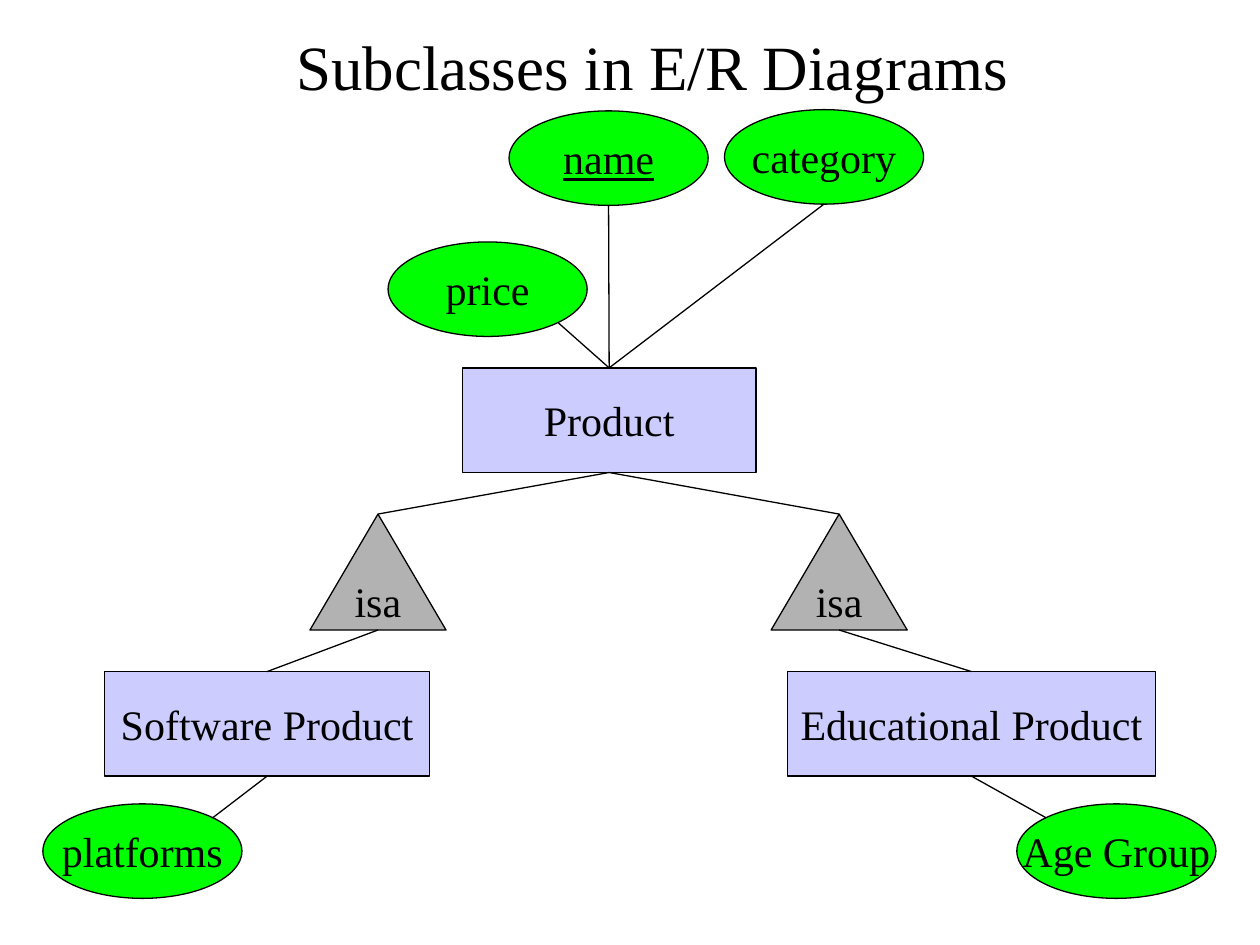
"""Build the slide "Subclasses in E/R Diagrams"."""
import math

from lxml import etree
from pptx import Presentation
from pptx.dml.color import RGBColor
from pptx.enum import shapes, text
from pptx.oxml import ns
from pptx.util import Inches, Pt

BLACK = RGBColor(0, 0, 0)
GREEN = RGBColor(0, 255, 0)
LAVENDER = RGBColor(0xCC, 0xCC, 0xFF)
GRAY = RGBColor(0xB2, 0xB2, 0xB2)
FONT = "Times New Roman"

TITLE = "Subclasses in E/R Diagrams"
KINDS = {
    "attribute": (shapes.MSO_SHAPE.OVAL, GREEN),
    "entity": (shapes.MSO_SHAPE.RECTANGLE, LAVENDER),
    "isa": (shapes.MSO_SHAPE.ISOSCELES_TRIANGLE, GRAY),
}
ATTRIBUTE_SIZE, ISA_SIZE = (1.58, 0.75), (1.08, 0.92)
NODES = [
    ("age", "attribute", "Age Group", (8.07, 6.38), ATTRIBUTE_SIZE),
    ("platforms", "attribute", "platforms", (0.34, 6.38), ATTRIBUTE_SIZE),
    ("name", "attribute", "name", (4.04, 0.88), ATTRIBUTE_SIZE),
    ("category", "attribute", "category", (5.75, 0.87), ATTRIBUTE_SIZE),
    ("price", "attribute", "price", (3.08, 1.92), ATTRIBUTE_SIZE),
    ("educational", "entity", "Educational Product", (6.25, 5.33), (2.92, 0.83)),
    ("software", "entity", "Software Product", (0.83, 5.33), (2.58, 0.83)),
    ("product", "entity", "Product", (3.67, 2.92), (2.33, 0.83)),
    ("isa_software", "isa", "isa", (2.46, 4.08), ISA_SIZE),
    ("isa_educational", "isa", "isa", (6.12, 4.08), ISA_SIZE),
]

TOP, BOTTOM = 0, 2
NEAR, FAR = 0.5 - math.sqrt(0.125), 0.5 + math.sqrt(0.125)
LINKS = [
    ("product", TOP, "price", (FAR, FAR)),
    ("product", TOP, "name", (0.5, 1)),
    ("product", TOP, "category", (0.5, 1)),
    ("product", BOTTOM, "isa_software", (0.5, 0)),
    ("product", BOTTOM, "isa_educational", (0.5, 0)),
    ("software", TOP, "isa_software", (0.5, 1)),
    ("educational", TOP, "isa_educational", (0.5, 1)),
    ("software", BOTTOM, "platforms", (FAR, NEAR)),
    ("educational", BOTTOM, "age", (NEAR, NEAR)),
]


def set_text(sp, words, size, align, anchor):
    tf = sp.text_frame
    tf.text = words
    tf.word_wrap = False
    tf.vertical_anchor = anchor
    p = tf.paragraphs[0]
    p.alignment = align
    p.font.name, p.font.size = FONT, Pt(size)
    p.font.color.rgb = BLACK
    return p


def add_node(s, kind, words, position, size):
    preset, color = KINDS[kind]
    sp = s.shapes.add_shape(preset, *map(Inches, position + size))
    sp.shadow.inherit = False
    sp.fill.solid()
    sp.fill.fore_color.rgb = color
    sp.line.color.rgb = BLACK
    sp.line.width = Pt(0.75)
    p = set_text(sp, words, 24, text.PP_ALIGN.CENTER, text.MSO_ANCHOR.MIDDLE)
    p.font.underline = True if words == "name" else None
    return sp


def add_link(s, entity, side, target, fraction):
    x = int(target.left + target.width * fraction[0])
    y = int(target.top + target.height * fraction[1])
    line = s.shapes.add_connector(shapes.MSO_CONNECTOR.STRAIGHT, x, y, x, y)
    line.begin_connect(entity, side)
    line.line.color.rgb = BLACK
    line.line.width = Pt(0.75)
    etree.SubElement(line._element.spPr, ns.qn("a:effectLst"))


def main():
    prs = Presentation()
    prs.slide_width, prs.slide_height = Inches(10), Inches(7.5)
    s = prs.slides.add_slide(prs.slide_layouts[5])

    title = s.shapes.title
    title.left, title.top = Inches(2.25), Inches(0.17)
    title.width, title.height = Inches(5.85), Inches(0.7)
    set_text(title, TITLE, 36, text.PP_ALIGN.LEFT, text.MSO_ANCHOR.TOP)
    title.text_frame.auto_size = text.MSO_AUTO_SIZE.NONE
    title.text_frame.margin_right = 0

    nodes = {key: add_node(s, *node) for key, *node in NODES}
    for entity, side, target, fraction in LINKS:
        add_link(s, nodes[entity], side, nodes[target], fraction)

    prs.save("out.pptx")


if __name__ == "__main__":
    main()
